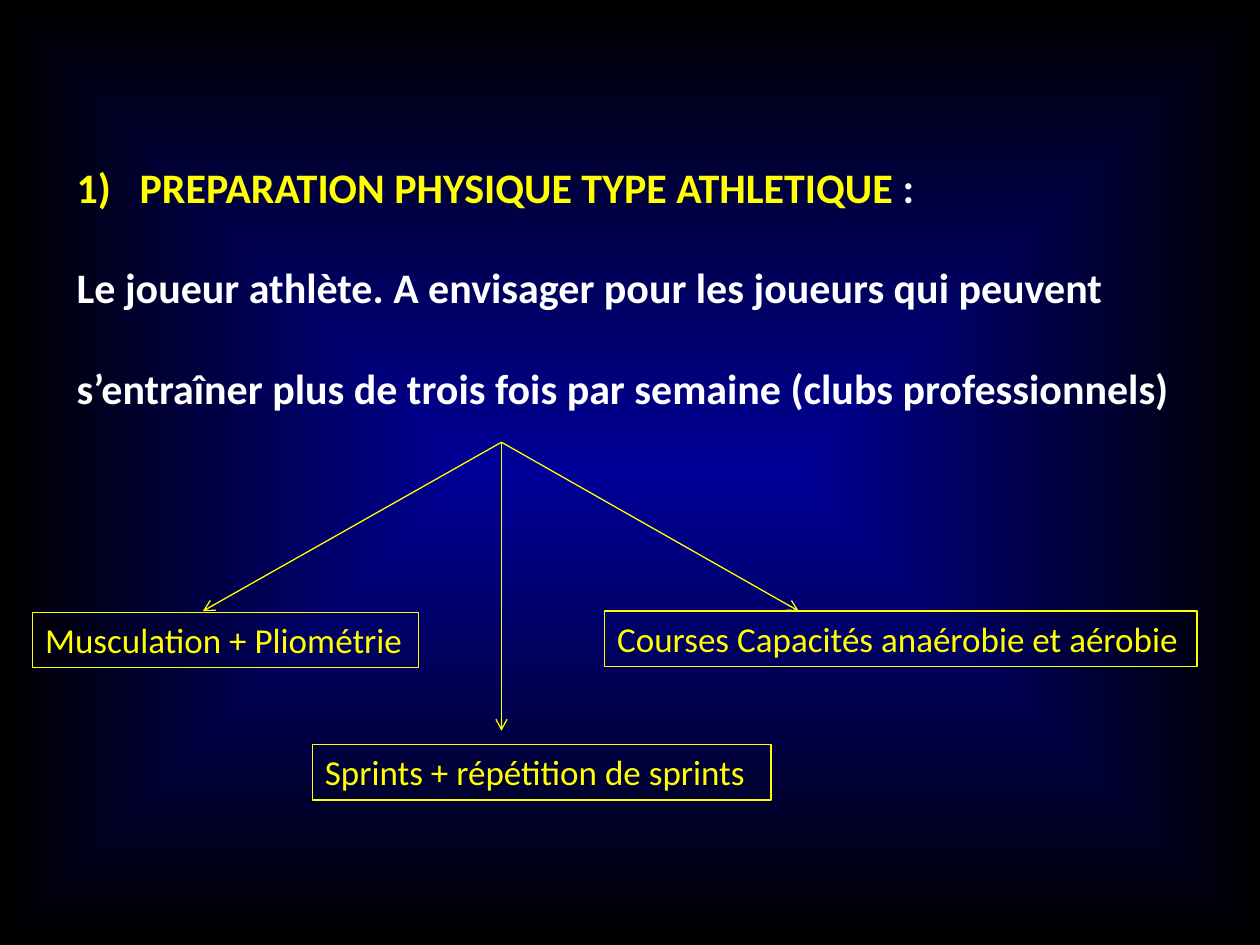
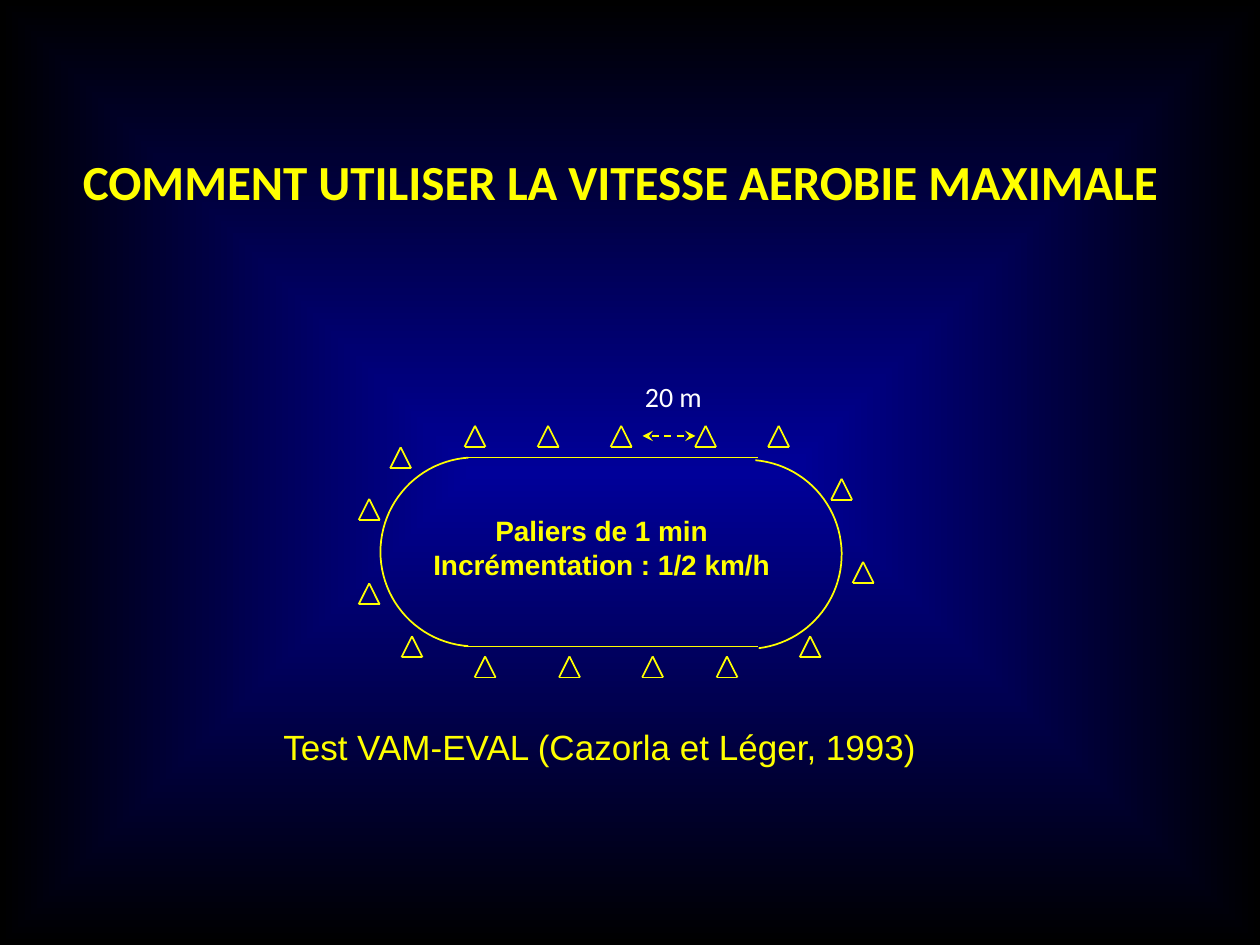
from math import cos, radians, sin

from lxml import etree
from pptx import Presentation
from pptx.dml.color import RGBColor
from pptx.enum.dml import MSO_LINE
from pptx.enum.shapes import MSO_CONNECTOR, MSO_SHAPE
from pptx.enum.text import MSO_ANCHOR, MSO_AUTO_SIZE, PP_ALIGN
from pptx.oxml.ns import qn
from pptx.util import Inches, Pt

STRAIGHT = MSO_CONNECTOR.STRAIGHT
RECT = MSO_SHAPE.RECTANGLE
DASH = MSO_LINE.DASH
GROW = MSO_AUTO_SIZE.SHAPE_TO_FIT_TEXT
TOP = MSO_ANCHOR.TOP
LEFT, CENTER = PP_ALIGN.LEFT, PP_ALIGN.CENTER

YELLOW, WHITE, BLUE, BLACK = "FFFF00", "FFFFFF", "000099", "000000"
SANS, ARIAL = "Calibri", "Arial"

SIDE = 1 / 6
TIPS = [
    (3.77, 3.38), (4.35, 3.38), (4.93, 3.38), (5.6, 3.38), (6.18, 3.38),
    (3.18, 3.55), (2.93, 3.96), (2.93, 4.63), (3.27, 5.05),
    (3.85, 5.21), (4.52, 5.21), (5.18, 5.21), (5.77, 5.21),
    (6.68, 3.8), (6.85, 4.46), (6.43, 5.05),
]


def paint(color, code):
    color.rgb = RGBColor.from_string(code)


def add_slide(prs):
    slide = prs.slides.add_slide(prs.slide_layouts[6])
    fill = slide.background.fill
    fill.gradient()
    for stop, code in zip(fill.gradient_stops, (BLUE, BLACK)):
        paint(stop.color, code)
    grad = slide.element.find(".//" + qn("a:gradFill"))
    grad.remove(grad.find(qn("a:lin")))
    glow = etree.SubElement(grad, qn("a:path"), path="shape")
    etree.SubElement(glow, qn("a:fillToRect"), l="50000", t="50000", r="50000", b="50000")
    return slide


def style_run(run, size, font, code, bold):
    run.font.size = Pt(size)
    run.font.name = font
    run.font.bold = bold
    paint(run.font.color, code)


def write(shape, lines, size, font=SANS, code=YELLOW, bold=False, align=LEFT, wrap=False):
    frame = shape.text_frame
    frame.text = "\n".join(lines)
    frame.word_wrap = wrap
    frame.auto_size = GROW
    frame.vertical_anchor = TOP
    for para in frame.paragraphs:
        para.alignment = align
        for run in para.runs:
            style_run(run, size, font, code, bold)
    return frame


def add_text(slide, box, lines, size, **style):
    shape = slide.shapes.add_textbox(*map(Inches, box))
    return write(shape, lines, size, **style)


def outline(shape, width):
    shape.shadow.inherit = False
    shape.fill.background()
    paint(shape.line.color, YELLOW)
    shape.line.width = Pt(width)


def add_label(slide, box, words):
    shape = slide.shapes.add_shape(RECT, *map(Inches, box))
    outline(shape, 0.75)
    write(shape, [words], 20)


def add_bend(slide, x, y, radius, start, end, steps=48):
    turns = [radians(start + (end - start) * i / steps) for i in range(steps + 1)]
    spots = [(Inches(x + radius * cos(t)), Inches(y + radius * sin(t))) for t in turns]
    form = slide.shapes.build_freeform(*spots[0])
    form.add_line_segments(spots[1:], close=False)
    outline(form.convert_to_shape(), 1)


def add_line(slide, start, end, width=1, head=None, tail=None, dash=None):
    line = slide.shapes.add_connector(STRAIGHT, *map(Inches, start + end))
    paint(line.line.color, YELLOW)
    line.line.width = Pt(width)
    if dash:
        line.line.dash_style = dash
    props = line.element.spPr
    for tag, kind in (("a:headEnd", head), ("a:tailEnd", tail)):
        if kind:
            etree.SubElement(props.find(qn("a:ln")), qn(tag), type=kind)
    etree.SubElement(props, qn("a:effectLst"))


def add_cone(slide, x, y):
    tip = (x, y)
    left, right = [(x + shift, y + SIDE) for shift in (-SIDE / 2, SIDE / 2)]
    for start, end in ((tip, left), (tip, right), (right, left)):
        add_line(slide, start, end)


def draw_types(prs):
    slide = add_slide(prs)
    lines = [
        "PREPARATION PHYSIQUE TYPE ATHLETIQUE ",
        "Le joueur athlète. A envisager pour les joueurs qui peuvent "
        "s’entraîner plus de trois fois par semaine (clubs professionnels)",
    ]
    frame = add_text(slide, (0.51, 0.83, 8.98, 2.52), lines, 24, bold=True, wrap=True)
    title, body = frame.paragraphs
    props = title._p.get_or_add_pPr()
    props.set("marL", str(Inches(0.5)))
    props.set("indent", str(Inches(-0.5)))
    etree.SubElement(props, qn("a:buFont"), typeface=SANS)
    etree.SubElement(props, qn("a:buAutoNum"), type="arabicParenR")
    colon = title.add_run()
    colon.text = ":"
    for run in (colon, *body.runs):
        style_run(run, 24, SANS, WHITE, True)
    for para in frame.paragraphs:
        para.line_spacing = 2.0

    for end in ((1.61, 4.85), (3.98, 5.8), (6.34, 4.85)):
        add_line(slide, (3.98, 3.51), end, 0.75, tail="arrow")
    add_label(slide, (0.26, 4.86, 3.06, 0.44), "Musculation + Pliométrie")
    add_label(slide, (4.8, 4.85, 4.7, 0.44), "Courses Capacités anaérobie et aérobie")
    add_label(slide, (2.48, 5.91, 3.64, 0.44), "Sprints + répétition de sprints")


def draw_track(prs):
    slide = add_slide(prs)
    add_text(slide, (0.56, 1.15, 8.83, 0.57),
             ["COMMENT UTILISER LA VITESSE AEROBIE MAXIMALE"], 28, bold=True)
    add_bend(slide, 3.77, 4.38, 0.75, 94, 266)
    add_bend(slide, 5.93, 4.4, 0.75, -85, 83)
    for y in (3.63, 5.13):
        add_line(slide, (3.68, y), (6.02, y))
    for x, y in TIPS:
        add_cone(slide, x, y)
    add_line(slide, (5.1, 3.46), (5.52, 3.46), head="stealth", tail="stealth", dash=DASH)
    add_text(slide, (5.02, 2.96, 0.66, 0.37), ["20 m"], 16, code=WHITE)
    add_text(slide, (2.15, 5.71, 5.45, 0.43),
             ["Test VAM-EVAL (Cazorla et Léger, 1993)"], 20, font=ARIAL)
    add_text(slide, (3.33, 4.03, 2.89, 0.64),
             ["Paliers de 1 min", "Incrémentation : 1/2 km/h"], 16,
             font=ARIAL, bold=True, align=CENTER)


def main():
    prs = Presentation()
    prs.slide_width, prs.slide_height = Inches(10), Inches(7.5)
    draw_types(prs)
    draw_track(prs)
    prs.save("out.pptx")


if __name__ == "__main__":
    main()
